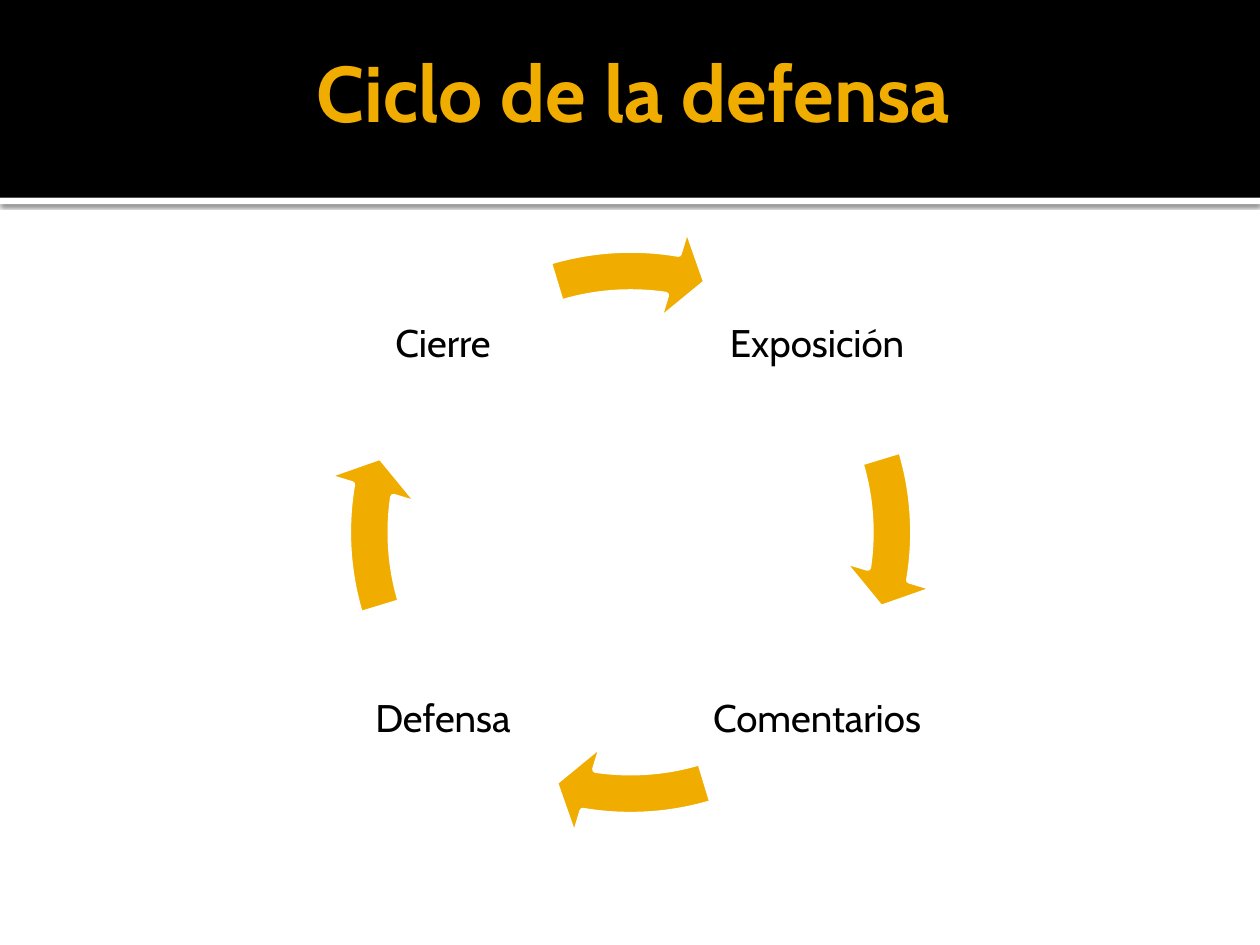
from lxml.etree import SubElement
from pptx import Presentation
from pptx.dml.color import RGBColor
from pptx.enum.shapes import MSO_SHAPE
from pptx.enum.text import MSO_ANCHOR, MSO_AUTO_SIZE, PP_ALIGN
from pptx.oxml.ns import qn
from pptx.util import Inches, Pt

BLACK, WHITE, GOLD = "000000", "FFFFFF", "F0AD00"
FULL_TURN = 216


def color(value):
    return RGBColor.from_string(value)


def apply_format(target, values):
    for name, value in values.items():
        setattr(target, name, value)


class CycleSlide:
    font = "Cabin"

    def __init__(self, presentation):
        self.slide = presentation.slides.add_slide(presentation.slide_layouts[5])
        self.shapes = self.slide.shapes

    def fill_text(self, shape, text, size, ink, margins, bold=False, spacing=1.0):
        frame = shape.text_frame
        frame.text = text
        left, top, right, bottom = map(Inches, margins)
        apply_format(frame, {
            "word_wrap": True,
            "auto_size": MSO_AUTO_SIZE.NONE,
            "vertical_anchor": MSO_ANCHOR.MIDDLE,
            "margin_left": left,
            "margin_top": top,
            "margin_right": right,
            "margin_bottom": bottom,
        })
        paragraph = frame.paragraphs[0]
        apply_format(paragraph, {"alignment": PP_ALIGN.CENTER, "line_spacing": spacing})
        font = paragraph.runs[0].font
        apply_format(font, {"name": self.font, "size": Pt(size), "bold": bold})
        font.color.rgb = color(ink)

    def shape(self, kind, box, fill):
        shape = self.shapes.add_shape(kind, *map(Inches, box))
        shape.shadow.inherit = False
        shape.fill.solid()
        shape.fill.fore_color.rgb = color(fill)
        shape.line.fill.background()
        return shape

    def band(self, top, height, fill):
        return self.shape(MSO_SHAPE.RECTANGLE, (0, top, 10, height), fill)

    def shadowed_band(self, top, height, fill):
        band = self.band(top, height, fill)
        effects = band.element.spPr.find(qn("a:effectLst"))
        shadow = SubElement(effects, qn("a:outerShdw"), blurRad=str(Pt(2.5)),
                            dist=str(Pt(0.8)), dir="5400000", rotWithShape="0")
        ink = SubElement(shadow, qn("a:srgbClr"), val=BLACK)
        SubElement(ink, qn("a:alpha"), val="60000")

    def title(self, text, box):
        title = self.shapes.title
        apply_format(title, dict(zip(("left", "top", "width", "height"), map(Inches, box))))
        self.fill_text(title, text, 45, GOLD, (0.1, 0.05, 0.05, 0.05), bold=True)
        title.element.getparent().append(title.element)

    def stage(self, text, left, top):
        label = self.shapes.add_textbox(*map(Inches, (left, top, 1.75, 1.75)))
        self.fill_text(label, text, 22, BLACK, (0.03,) * 4, spacing=0.9)

    def arrow(self, quarter):
        arrow = self.shape(MSO_SHAPE.CIRCULAR_ARROW, (2.53, 1.75, 4.95, 4.95), GOLD)
        arrow.line.color.rgb = color(WHITE)
        arrow.line.width = Pt(3.78)
        turn = quarter * FULL_TURN / 4
        values = (0.069, 4.654, 5.49 + turn, (205.855 + turn) % FULL_TURN, 0.081)
        for index, value in enumerate(values):
            arrow.adjustments[index] = value


def main():
    presentation = Presentation()
    apply_format(presentation, {"slide_width": Inches(10), "slide_height": Inches(7.5)})
    cycle = CycleSlide(presentation)
    cycle.shadowed_band(1.57, 0.05, WHITE)
    cycle.band(0, 1.57, BLACK)
    cycle.title("Ciclo de la defensa", (0.5, 0.3, 9, 0.85))

    west, east, north, south = 2.64, 5.61, 1.86, 4.84
    stages = [
        ("Exposición", east, north),
        ("Comentarios", east, south),
        ("Defensa", west, south),
        ("Cierre", west, north),
    ]
    for quarter, (name, left, top) in enumerate(stages):
        cycle.stage(name, left, top)
        cycle.arrow(quarter)
    presentation.save("out.pptx")


if __name__ == "__main__":
    main()
